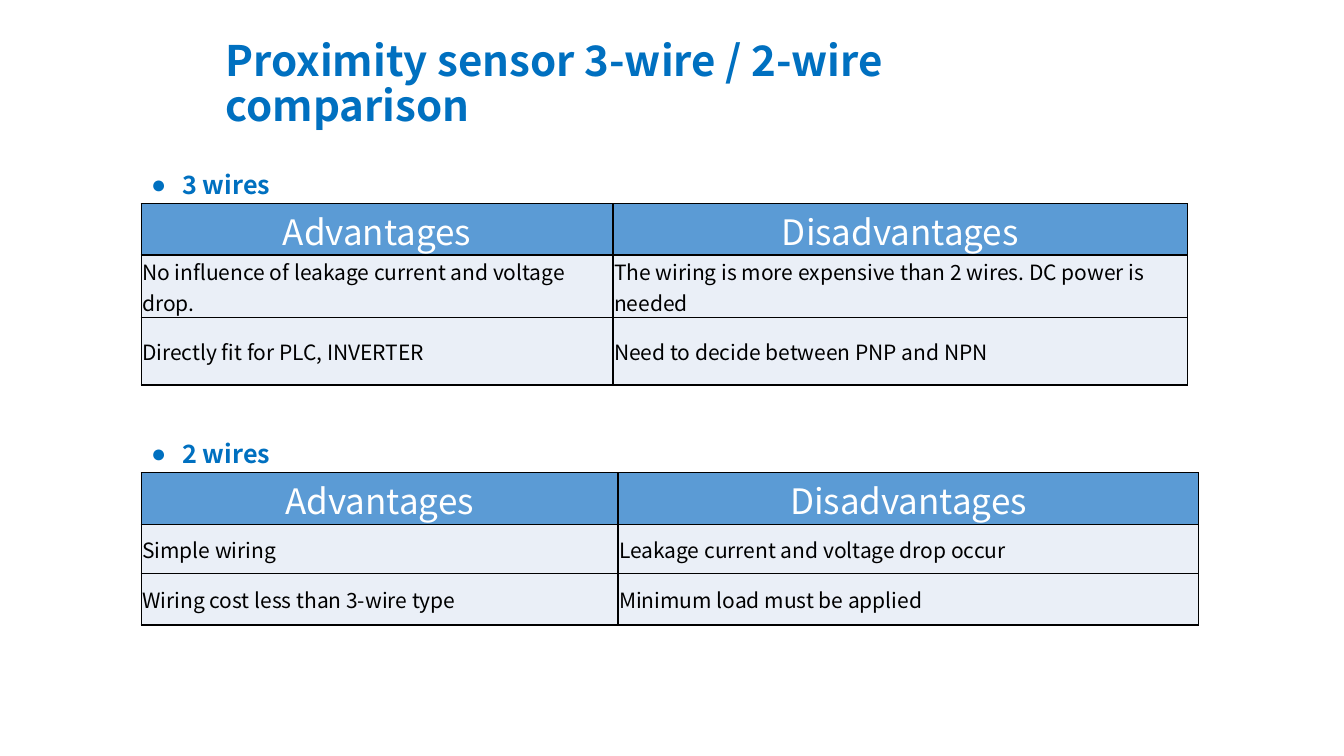
import pptx
import pptx.util
import pptx.dml.color
import pptx.enum.text
import pptx.oxml
import pptx.oxml.ns
from lxml import etree

Inches = pptx.util.Inches
Pt = pptx.util.Pt
ALIGN = pptx.enum.text.PP_ALIGN
ANCHOR = pptx.enum.text.MSO_ANCHOR
FONT = "Noto Sans CJK KR"
COLORS = {
    "accent": "0070C0",
    "header": "5B9BD5",
    "body": "EAEFF7",
    "white": "FFFFFF",
    "black": "000000",
}
HEADINGS = ["Advantages", "Disadvantages"]


def rgb(name):
    return pptx.dml.color.RGBColor.from_string(COLORS[name])


def write(frame, text, size, color, bold=False, align=ALIGN.LEFT, spacing=None):
    """Fill a text frame, one paragraph for each line of text."""
    frame.word_wrap = True
    for index, line in enumerate(text.split("\n")):
        paragraph = frame.add_paragraph() if index else frame.paragraphs[0]
        paragraph.alignment = align
        if spacing:
            paragraph.line_spacing = spacing
        run = paragraph.add_run()
        run.text = line
        run.font.name = FONT
        run.font.size = Pt(size)
        run.font.bold = bold
        run.font.color.rgb = rgb(color)


def add_bullet(paragraph):
    props = paragraph._p.get_or_add_pPr()
    props.set("marL", str(Inches(0.31)))
    props.set("indent", str(-Inches(0.31)))
    typeface = etree.SubElement(props, pptx.oxml.ns.qn("a:buFont"))
    typeface.set("typeface", "Arial")
    etree.SubElement(props, pptx.oxml.ns.qn("a:buChar")).set("char", "●")


def add_borders(cell):
    props = cell._tc.get_or_add_tcPr()
    for index, side in enumerate(("lnL", "lnR", "lnT", "lnB")):
        line = pptx.oxml.parse_xml(
            f'<a:{side} {pptx.oxml.ns.nsdecls("a")} w="{Pt(1)}"><a:solidFill>'
            f'<a:srgbClr val="{COLORS["black"]}"/></a:solidFill></a:{side}>')
        props.insert(index, line)


def add_title(slide, left, top, width, height):
    title = slide.shapes.add_textbox(
        Inches(left), Inches(top), Inches(width), Inches(height)).text_frame
    title.vertical_anchor = ANCHOR.MIDDLE
    title.margin_right = Inches(0.2)
    write(title, "Proximity sensor 3-wire / 2-wire comparison",
          size=30, color="accent", bold=True, spacing=0.9)


def add_comparison(slide, left, top, label, columns, heights, points):
    """Place a bulleted label with its table of pros and cons below."""
    heading = slide.shapes.add_textbox(
        Inches(left), Inches(top), Inches(2.32), Inches(0.39)).text_frame
    write(heading, label, size=18, color="accent", bold=True)
    add_bullet(heading.paragraphs[0])

    rows = [HEADINGS] + points
    table = slide.shapes.add_table(
        len(rows), len(columns), Inches(left), Inches(top + 0.39),
        Inches(sum(columns)), Inches(sum(heights))).table
    for column, width in zip(table.columns, columns):
        column.width = Inches(width)
    for r, (texts, height) in enumerate(zip(rows, heights)):
        table.rows[r].height = Inches(height)
        for c, text in enumerate(texts):
            cell = table.cell(r, c)
            cell.margin_left = cell.margin_right = cell.margin_top = Inches(0.01)
            cell.margin_bottom = 0
            cell.vertical_anchor = ANCHOR.MIDDLE
            cell.fill.solid()
            cell.fill.fore_color.rgb = rgb("body" if r else "header")
            add_borders(cell)
            if r:
                write(cell.text_frame, text, size=15, color="black")
            else:
                write(cell.text_frame, text, size=25, color="white", align=ALIGN.CENTER)


def main():
    deck = pptx.Presentation()
    deck.slide_width, deck.slide_height = Inches(13.33), Inches(7.5)
    slide = deck.slides.add_slide(deck.slide_layouts[6])

    add_title(slide, 2.14, 0.54, 9.21, 0.62)

    # 3-wire sensors
    add_comparison(slide, 1.4, 1.63, "3 wires", [4.68, 5.7], [0.51, 0.62, 0.67], [
        ["No influence of leakage current and voltage\ndrop.",
         "The wiring is more expensive than 2 wires. DC power is\nneeded"],
        ["Directly fit for PLC, INVERTER", "Need to decide between PNP and NPN"],
    ])

    # 2-wire sensors
    add_comparison(slide, 1.4, 4.3, "2 wires", [4.73, 5.76], [0.51, 0.49, 0.51], [
        ["Simple wiring", "Leakage current and voltage drop occur"],
        ["Wiring cost less than 3-wire type", "Minimum load must be applied"],
    ])

    deck.save("out.pptx")


if __name__ == "__main__":
    main()
